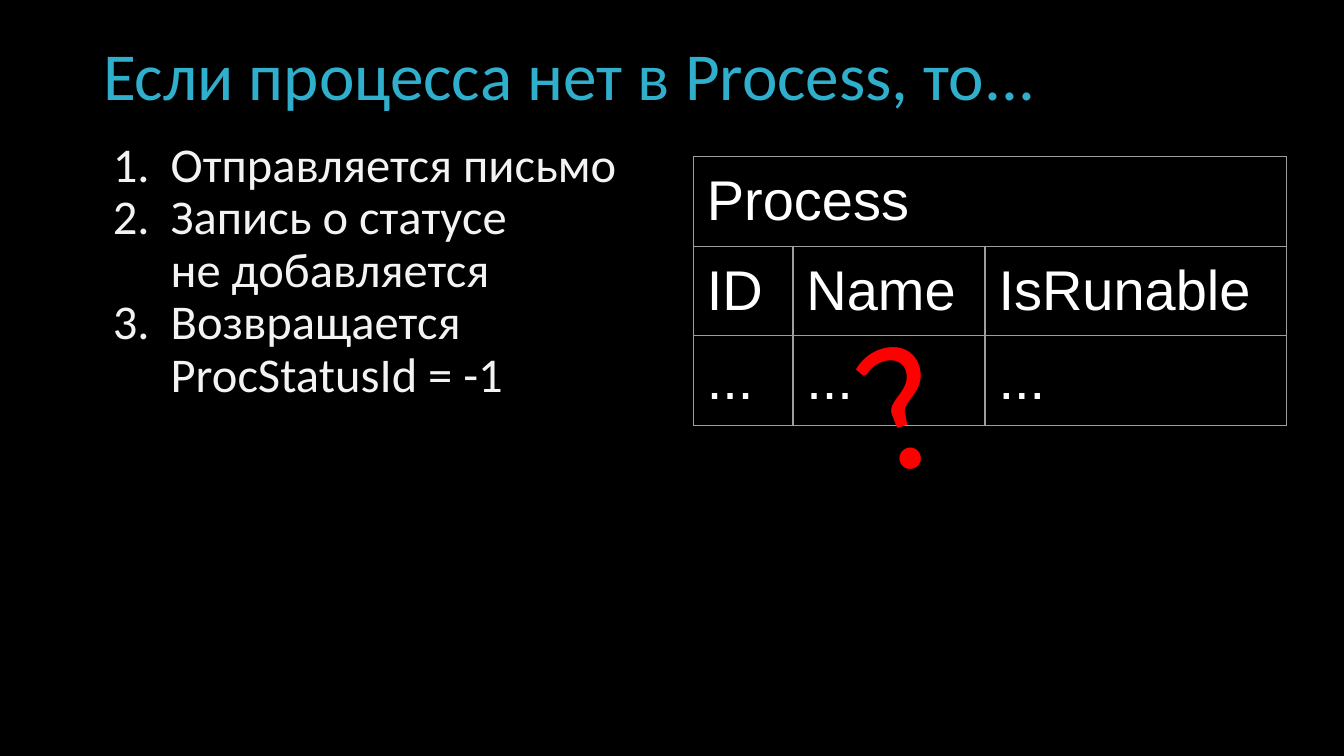
"""Builds a slide on what happens when a process is missing from the Process table."""
from dataclasses import dataclass

from lxml import etree
from pptx import Presentation
from pptx.dml.color import RGBColor
from pptx.enum.text import MSO_ANCHOR, MSO_AUTO_SIZE, PP_ALIGN
from pptx.oxml.ns import qn
from pptx.util import Inches, Pt

LEFT, TOP, MIDDLE = PP_ALIGN.LEFT, MSO_ANCHOR.TOP, MSO_ANCHOR.MIDDLE
NO_FIT = MSO_AUTO_SIZE.NONE
TITLE_ONLY = 5
SLIDE_W = Inches(10)
SLIDE_H = SLIDE_W * 9 // 16


@dataclass(frozen=True)
class Theme:
    back: str = "000000"
    title: str = "2FAFCC"
    body: str = "F3F3F3"
    cell: str = "FFFFFF"
    border: str = "9E9E9E"
    mark: str = "FF0000"
    font: str = "Calibri"
    table_font: str = "Arial"
    title_size: int = 36
    body_size: int = 26
    cell_size: int = 30
    mark_size: int = 96
    border_width: float = 0.75


@dataclass(frozen=True)
class Box:
    """Place and size in percent of the slide."""
    x: float
    y: float
    w: float
    h: float

    def emu(self) -> tuple:
        return col(self.x), row(self.y), col(self.w), row(self.h)


THEME = Theme()
TITLE_BOX = Box(6.9, 4.85, 90.4, 11)
LIST_BOX = Box(6.9, 17.9, 86.2, 68.6)
TABLE_BOX = Box(51.6, 20.75, 44.1, 35.4)
MARK_BOX = Box(62.6, 36.6, 8.3, 31.3)
COLUMNS = (7.4, 14.3, 22.4)
STEPS = (
    "Отправляется письмо",
    "Запись о статусе\vне добавляется",
    "Возвращается\vProcStatusId = -1",
)
ROWS = (("Process", "", ""), ("ID", "Name", "IsRunable"), ("...", "...", "..."))


def col(share: float) -> int:
    return round(SLIDE_W * share / 100)


def row(share: float) -> int:
    return round(SLIDE_H * share / 100)


def write(p, text: str, *, size: int, color: str, font: str = THEME.font,
          spacing: float = 1.0) -> None:
    p.text = text
    p.alignment = LEFT
    p.line_spacing = spacing
    p.space_before = Pt(0)
    for r in p.runs:
        r.font.size = Pt(size)
        r.font.name = font
        r.font.bold = False
        r.font.color.rgb = RGBColor.from_string(color)


def frame(sp, *, inset: tuple, anchor=TOP):
    tf = sp.text_frame
    tf.word_wrap = True
    tf.auto_size = NO_FIT
    tf.vertical_anchor = anchor
    tf.margin_left = tf.margin_right = Inches(inset[0])
    tf.margin_top = tf.margin_bottom = Inches(inset[1])
    return tf


def number(p, color: str) -> None:
    pPr = p._p.get_or_add_pPr()
    pPr.set("marL", str(Inches(0.5)))
    pPr.set("indent", str(Inches(-0.43)))
    clr = etree.SubElement(pPr, qn("a:buClr"))
    etree.SubElement(clr, qn("a:srgbClr"), val=color)
    etree.SubElement(pPr, qn("a:buFont"), typeface=THEME.font)
    etree.SubElement(pPr, qn("a:buAutoNum"), type="arabicPeriod")


def outline(cell, color: str, width: float) -> None:
    tcPr = cell._tc.get_or_add_tcPr()
    for i, side in enumerate(("a:lnL", "a:lnR", "a:lnT", "a:lnB")):
        ln = etree.Element(qn(side), w=str(Pt(width)))
        fill = etree.SubElement(ln, qn("a:solidFill"))
        etree.SubElement(fill, qn("a:srgbClr"), val=color)
        tcPr.insert(i, ln)


def add_title(s, text: str) -> None:
    sp = s.shapes.title
    sp.left, sp.top, sp.width, sp.height = TITLE_BOX.emu()
    tf = frame(sp, inset=(0.08, 0.04), anchor=MIDDLE)
    write(tf.paragraphs[0], text, size=THEME.title_size, color=THEME.title, spacing=0.9)


def add_steps(s, steps: tuple) -> None:
    tf = frame(s.shapes.add_textbox(*LIST_BOX.emu()), inset=(0.08, 0.04))
    for i, step in enumerate(steps):
        p = tf.add_paragraph() if i else tf.paragraphs[0]
        write(p, step, size=THEME.body_size, color=THEME.body, spacing=0.9)
        number(p, THEME.body)


def add_process_table(s, rows: tuple) -> None:
    table = s.shapes.add_table(len(rows), len(COLUMNS), *TABLE_BOX.emu()).table
    table.first_row = table.horz_banding = False
    for column, share in zip(table.columns, COLUMNS):
        column.width = col(share)
    table.cell(0, 0).merge(table.cell(0, len(COLUMNS) - 1))
    for i, texts in enumerate(rows):
        for j, text in enumerate(texts):
            cell = table.cell(i, j)
            cell.margin_left = cell.margin_right = Inches(0.1)
            cell.margin_top = cell.margin_bottom = Inches(0.1)
            cell.fill.background()
            outline(cell, THEME.border, THEME.border_width)
            if text:
                write(cell.text_frame.paragraphs[0], text, size=THEME.cell_size,
                      color=THEME.cell, font=THEME.table_font)


def add_question_mark(s) -> None:
    sp = s.shapes.add_textbox(*MARK_BOX.emu())
    sp.rotation = 342.9
    tf = frame(sp, inset=(0.1, 0.1))
    write(tf.paragraphs[0], "?", size=THEME.mark_size, color=THEME.mark)


def main() -> None:
    prs = Presentation()
    prs.slide_width, prs.slide_height = SLIDE_W, SLIDE_H
    s = prs.slides.add_slide(prs.slide_layouts[TITLE_ONLY])
    s.background.fill.solid()
    s.background.fill.fore_color.rgb = RGBColor.from_string(THEME.back)
    add_title(s, "Если процесса нет в Process, то...")
    add_steps(s, STEPS)
    add_process_table(s, ROWS)
    add_question_mark(s)
    prs.save("out.pptx")


if __name__ == "__main__":
    main()
